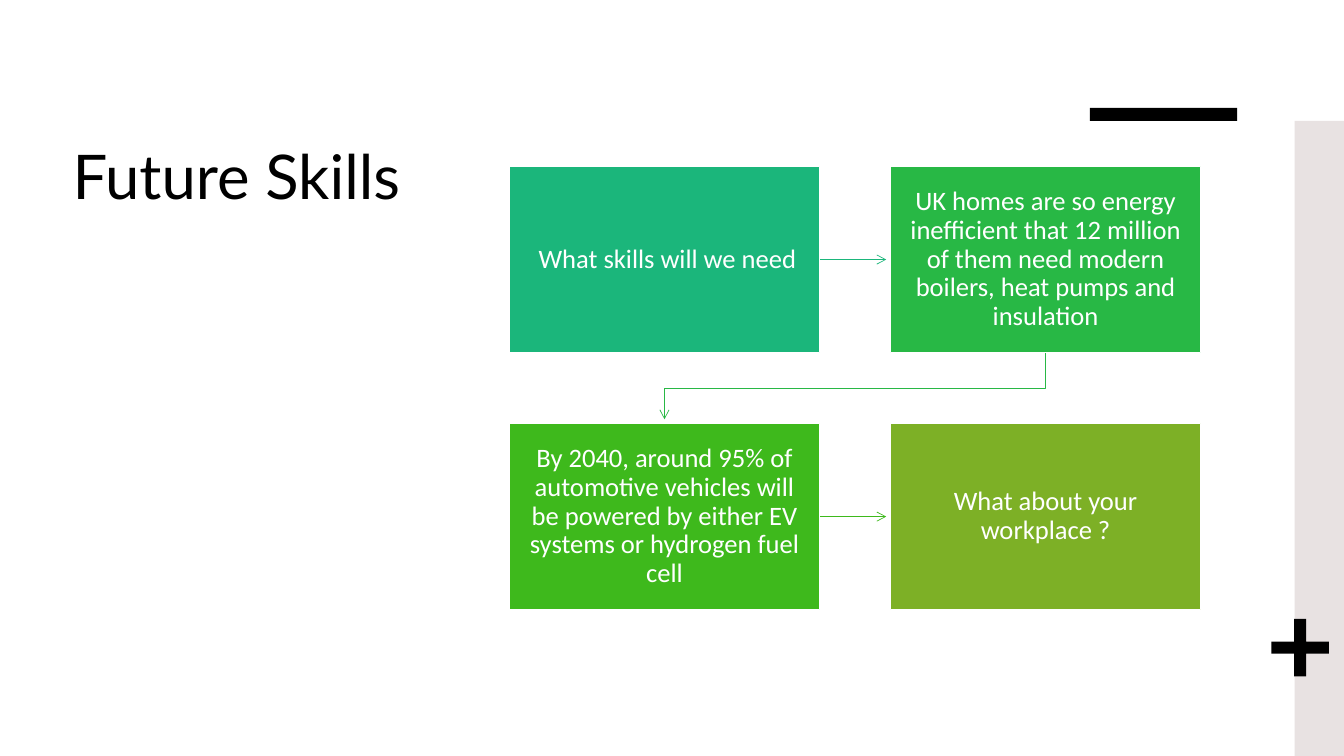
from dataclasses import dataclass

from lxml import etree
from pptx import Presentation
from pptx.dml.color import RGBColor
from pptx.enum.shapes import MSO_CONNECTOR, MSO_SHAPE
from pptx.enum.text import MSO_ANCHOR, MSO_AUTO_SIZE, PP_ALIGN
from pptx.oxml.ns import qn
from pptx.util import Inches, Pt

RECT, PLUS = MSO_SHAPE.RECTANGLE, MSO_SHAPE.CROSS
STRAIGHT = MSO_CONNECTOR.STRAIGHT
TOP, MIDDLE = MSO_ANCHOR.TOP, MSO_ANCHOR.MIDDLE
LEFT, CENTER = PP_ALIGN.LEFT, PP_ALIGN.CENTER
NO_FIT = MSO_AUTO_SIZE.NONE

COLORS = {
    "black": "000000",
    "white": "FFFFFF",
    "panel": "E8E2E2",
    "teal": "1BB67B",
    "green": "28B845",
    "leaf": "3EB91C",
    "olive": "7DB026",
}

# Grid of the flow, in inches
GRID_X, GRID_Y = 5.05, 1.65
STEP_X, STEP_Y = 3.78, 2.55
BOX_W, BOX_H = 3.08, 1.85
GAP = 0.04


@dataclass(frozen=True)
class Card:
    col: int
    row: int
    color: str
    text: str

    @property
    def left(self) -> float:
        return GRID_X + self.col * STEP_X

    @property
    def top(self) -> float:
        return GRID_Y + self.row * STEP_Y

    @property
    def center(self) -> float:
        return self.left + BOX_W / 2


@dataclass(frozen=True)
class Decor:
    kind: int
    left: float
    top: float
    width: float
    height: float
    color: str


CARDS = [
    Card(0, 0, "teal", " What skills will we need"),
    Card(1, 0, "green", "UK homes are so energy inefficient that 12 million of them "
                        "need modern boilers, heat pumps and insulation"),
    Card(0, 1, "leaf", "By 2040, around 95% of automotive vehicles will be powered "
                       "by either EV systems or hydrogen fuel cell"),
    Card(1, 1, "olive", "What about your workplace ?"),
]

DECORS = [
    Decor(RECT, 12.84, 1.2, 0.5, 6.3, "panel"),
    Decor(RECT, 10.81, 1.07, 1.46, 0.13, "black"),
    Decor(PLUS, 12.61, 6.14, 0.57, 0.57, "black"),
]


def rgb(name: str) -> RGBColor:
    return RGBColor.from_string(COLORS[name])


def style_text(frame, size: float, font: str, color: str, align: int) -> None:
    frame.word_wrap = True
    for para in frame.paragraphs:
        para.alignment = align
        for run in para.runs:
            run.font.size = Pt(size)
            run.font.name = font
            run.font.color.rgb = rgb(color)


def add_block(slide, kind: int, left: float, top: float,
              width: float, height: float, color: str):
    block = slide.shapes.add_shape(
        kind, Inches(left), Inches(top), Inches(width), Inches(height))
    block.shadow.inherit = False
    block.fill.solid()
    block.fill.fore_color.rgb = rgb(color)
    block.line.fill.background()
    return block


def add_card(slide, card: Card) -> None:
    box = add_block(slide, RECT, card.left, card.top, BOX_W, BOX_H, card.color)
    box.line.color.rgb = rgb("white")
    box.line.width = Pt(1)
    frame = box.text_frame
    frame.text = card.text
    frame.vertical_anchor = MIDDLE
    frame.margin_left = frame.margin_right = Inches(0.15)
    frame.margin_top = frame.margin_bottom = Inches(0.16)
    frame.paragraphs[0].line_spacing = 0.9
    style_text(frame, 19, "Calibri", "white", CENTER)


def style_arrow(arrow, color: str) -> None:
    arrow.line.color.rgb = rgb(color)
    arrow.line.width = Pt(0.5)
    tail = etree.SubElement(arrow.line._get_or_add_ln(), qn("a:tailEnd"))
    tail.set("type", "arrow")


def link_row(slide, card: Card) -> None:
    """Straight arrow to the next card of the row."""
    y = Inches(card.top + BOX_H / 2)
    start = Inches(card.left + BOX_W)
    end = Inches(card.left + STEP_X - GAP)
    arrow = slide.shapes.add_connector(STRAIGHT, start, y, end, y)
    style_arrow(arrow, card.color)
    etree.SubElement(arrow._element.spPr, qn("a:effectLst"))


def link_down(slide, start: Card, end: Card) -> None:
    """Bent arrow to the first card of the next row."""
    base = start.top + BOX_H
    mid = (base + end.top) / 2
    pen = slide.shapes.build_freeform(
        Inches(start.center), Inches(base), scale=1.0)
    bends = [(start.center, mid), (end.center, mid), (end.center, end.top - GAP)]
    pen.add_line_segments([(Inches(x), Inches(y)) for x, y in bends], close=False)
    arrow = pen.convert_to_shape()
    arrow.fill.background()
    style_arrow(arrow, start.color)
    arrow.shadow.inherit = False


def add_title(slide) -> None:
    title = slide.shapes.title
    title.left, title.top = Inches(0.62), Inches(1.32)
    title.width, title.height = Inches(3.5), Inches(4.4)
    frame = title.text_frame
    frame.text = "Future Skills"
    frame.vertical_anchor = TOP
    frame.auto_size = NO_FIT
    style_text(frame, 44, "Lato", "black", LEFT)


def main() -> None:
    deck = Presentation()
    deck.slide_width, deck.slide_height = Inches(13.33), Inches(7.5)
    slide = deck.slides.add_slide(deck.slide_layouts[5])

    # Title and side decoration
    add_title(slide)
    for item in DECORS:
        block = add_block(slide, item.kind, item.left, item.top,
                          item.width, item.height, item.color)
        if item.kind == PLUS:
            block.adjustments[0] = 0.395

    # Arrows, then cards
    link_row(slide, CARDS[0])
    link_down(slide, CARDS[1], CARDS[2])
    link_row(slide, CARDS[2])
    for card in CARDS:
        add_card(slide, card)

    deck.save("out.pptx")


if __name__ == "__main__":
    main()
